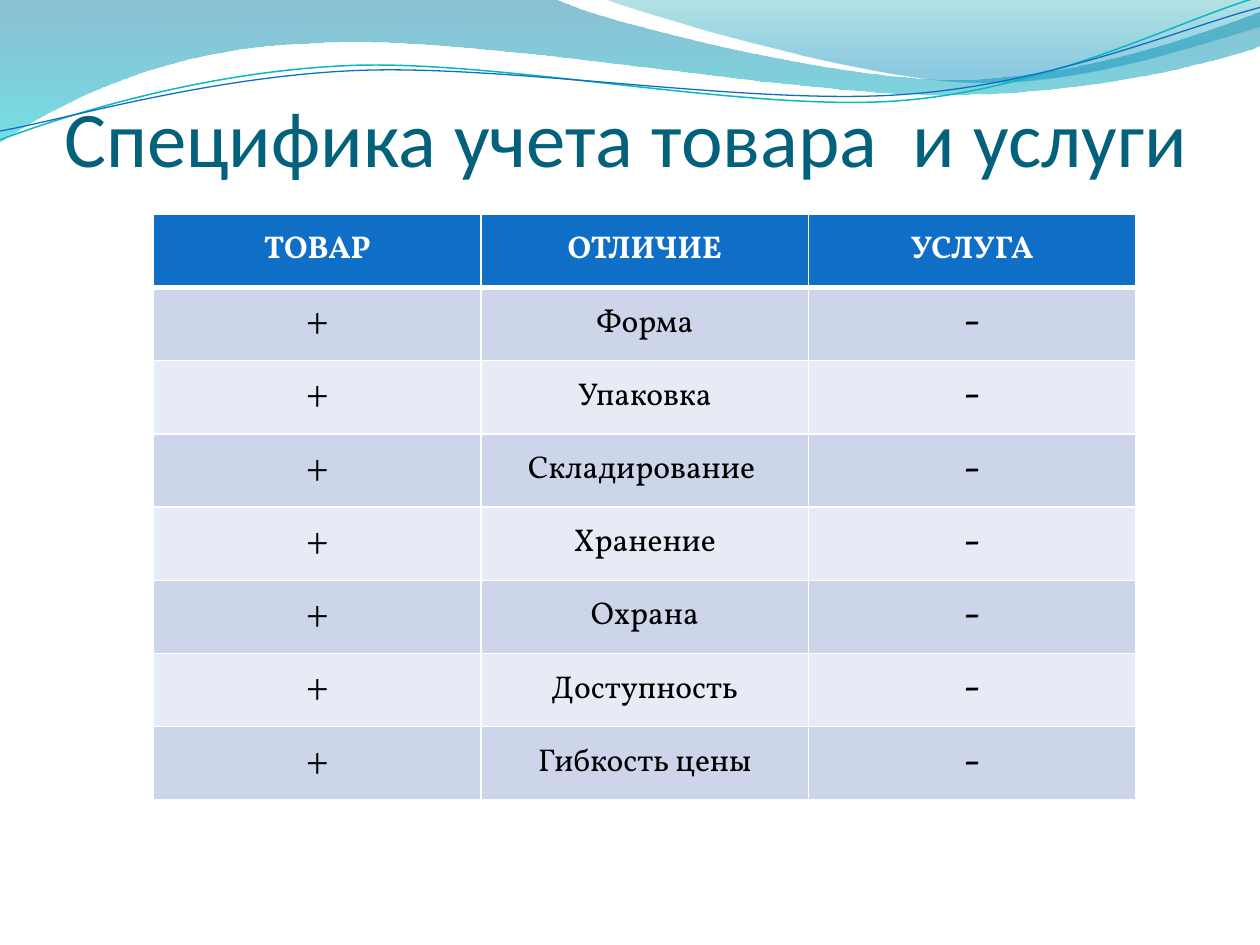
import math

from lxml import etree
from pptx import Presentation
from pptx import util as u
from pptx.dml.color import RGBColor
from pptx.enum import text
from pptx.oxml.ns import qn

COLUMNS, ROWS = 100, 75

LEFT_WAVE = [(0, 0), (44, -.1), (47.6, 1.7, 66.4, 6.3, 75.8, 6.3),
             (85.3, 6.3, 95.8, 2.6, 100, .9), (100.1, 3.6),
             (98.3, 4.4, 87, 7.6, 74.6, 7.5), (62.2, 7.5, 38.2, 2.8, 25.7, 3.4),
             (12.9, 3.6, 4.6, 8.3, -.1, 11.3), (0, 0)]
RIGHT_WAVE = [(47.9, -.1), (50.9, 1.1, 68.2, 6.2, 76.9, 6.5),
              (85.6, 6.9, 96.1, 3.2, 100, 2.1), (100, 0), (47.9, -.1)]
TEAL_LINE = [(0, 11.1), (4.8, 9.3, 15.8, 5.7, 27.7, 5.2),
             (39.5, 4.7, 59.3, 8.9, 71.3, 8), (83.3, 7.1, 93.8, 1.5, 99.8, -.2)]
BLUE_LINE = [(0, 10.4), (4.7, 9.6, 16.4, 6.1, 28.3, 5.6),
             (40.3, 5.1, 59.7, 8.4, 71.7, 7.5), (83.6, 6.7, 94.1, 2.1, 100, .6)]

HEADINGS = ["ТОВАР", "ОТЛИЧИЕ", "УСЛУГА"]
DIFFERENCES = ["Форма", "Упаковка", "Складирование ", "Хранение", "Охрана",
               "Доступность", "Гибкость цены"]


def color(hex_string):
    return RGBColor.from_string(hex_string)


def write(frame, words, size=18, font="Vollkorn", ink="000000", bold=False,
          align=text.PP_ALIGN.CENTER):
    paragraph = frame.paragraphs[0]
    paragraph.alignment = align
    run = paragraph.add_run()
    run.text = words
    run.font.size, run.font.name, run.font.bold = u.Pt(size), font, bold
    run.font.color.rgb = color(ink)


def turn(segments, center, degrees):
    cos, sin = math.cos(math.radians(degrees)), math.sin(math.radians(degrees))
    cx, cy = center
    turned = []
    for segment in segments:
        pairs = zip(segment[::2], segment[1::2])
        turned.append(tuple(
            value for x, y in pairs
            for value in (cx + (x - cx) * cos - (y - cy) * sin,
                          cy + (x - cx) * sin + (y - cy) * cos)))
    return turned


def bend(shape, segments):
    lines = iter(list(shape._element.iter(qn("a:lnTo"))))
    for segment in segments[1:]:
        steps = [next(lines) for _ in segment[::2]]
        if len(steps) == 3:
            curve = etree.Element(qn("a:cubicBezTo"))
            steps[0].addprevious(curve)
            for step in steps:
                curve.append(step[0])
                step.getparent().remove(step)


class Deck:
    header, bands, rule = "0F6FC6", ("CCD5EA", "E7EBF5"), "FFFFFF"
    tilt = 2.7

    def __init__(self):
        self.show = Presentation()
        self.show.slide_width, self.show.slide_height = u.Inches(10), u.Inches(7.5)
        self.slide = self.show.slides.add_slide(self.show.slide_layouts[5])

    def grid(self, column, row):
        return (round(column * self.show.slide_width / COLUMNS),
                round(row * self.show.slide_height / ROWS))

    def outline(self, segments, close):
        spots = [self.grid(*pair) for segment in segments
                 for pair in zip(segment[::2], segment[1::2])]
        builder = self.slide.shapes.build_freeform(*spots[0], scale=1.0)
        builder.add_line_segments(spots[1:], close=close)
        shape = builder.convert_to_shape()
        bend(shape, segments)
        shape.shadow.inherit = False
        return shape

    def wave(self, segments, stops):
        shape = self.outline(segments, True)
        shape.line.fill.background()
        shape.fill.gradient()
        shape.fill.gradient_angle = 270
        for stop, (position, tint, _) in zip(shape.fill.gradient_stops, stops):
            stop.position = position
            stop.color.rgb = color(tint)
        tints = shape._element.spPr.iter(qn("a:srgbClr"))
        for tint, (_, _, opacity) in zip(tints, stops):
            etree.SubElement(tint, qn("a:alpha"), val=str(opacity * 1000))

    def swoosh(self, segments, center, tint, width):
        shape = self.outline(turn(segments, center, self.tilt), False)
        shape.rotation = -self.tilt
        shape.fill.background()
        shape.line.color.rgb = color(tint)
        shape.line.width = u.Pt(width)

    def title(self, words, left, top, width, height):
        title = self.slide.shapes.title
        title.left, title.top = self.grid(left, top)
        title.width, title.height = self.grid(width, height)
        frame = title.text_frame
        frame.margin_left = frame.margin_right = frame.margin_bottom = 0
        frame.margin_top = u.Inches(.05)
        frame.word_wrap = True
        frame.auto_size = text.MSO_AUTO_SIZE.NONE
        frame.vertical_anchor = text.MSO_ANCHOR.BOTTOM
        write(frame, words, size=45, font="Calibri", ink="04617B",
              align=text.PP_ALIGN.LEFT)
        self.slide.shapes._spTree.append(title._element)

    def borders(self, cell, widths):
        properties = cell._tc.get_or_add_tcPr()
        for index, (side, width) in enumerate(widths.items()):
            line = etree.Element(qn(f"a:ln{side}"), w=str(u.Pt(width)))
            fill = etree.SubElement(line, qn("a:solidFill"))
            etree.SubElement(fill, qn("a:srgbClr"), val=self.rule)
            properties.insert(index, line)

    def cell(self, cell, words, row):
        is_header = row == 0
        cell.fill.solid()
        cell.fill.fore_color.rgb = color(
            self.header if is_header else self.bands[(row - 1) % 2])
        cell.vertical_anchor = text.MSO_ANCHOR.MIDDLE
        write(cell.text_frame, words, size=24 if words in "+-" else 18,
              ink="FFFFFF" if is_header else "000000", bold=is_header)
        self.borders(cell, {"L": 1, "R": 1, "T": 3 if row == 1 else 1,
                            "B": 3 if is_header else 1})

    def table(self, records, left, top, width, height):
        table = self.slide.shapes.add_table(
            len(records), len(records[0]),
            *self.grid(left, top), *self.grid(width, height)).table
        for row, record in enumerate(records):
            for column, words in enumerate(record):
                self.cell(table.cell(row, column), words, row)


def main():
    deck = Deck()
    deck.wave(LEFT_WAVE, [(0, "0074A1", 45), (1, "00C6CF", 55)])
    deck.wave(RIGHT_WAVE, [(0, "00A1A9", 30), (.8, "008BBF", 45)])
    deck.swoosh(TEAL_LINE, (49.9, 5.75), "0AB8BF", .85)
    deck.swoosh(BLUE_LINE, (50, 5.9), "0F6FC6", .75)
    deck.title("Специфика учета товара  и услуги", 5.1, 2.1, 90.8, 12.45)
    comparison = [HEADINGS] + [["+", difference, "-"] for difference in DIFFERENCES]
    deck.table(comparison, 12.2, 17, 77.95, 46.5)
    deck.show.save("out.pptx")


if __name__ == "__main__":
    main()
